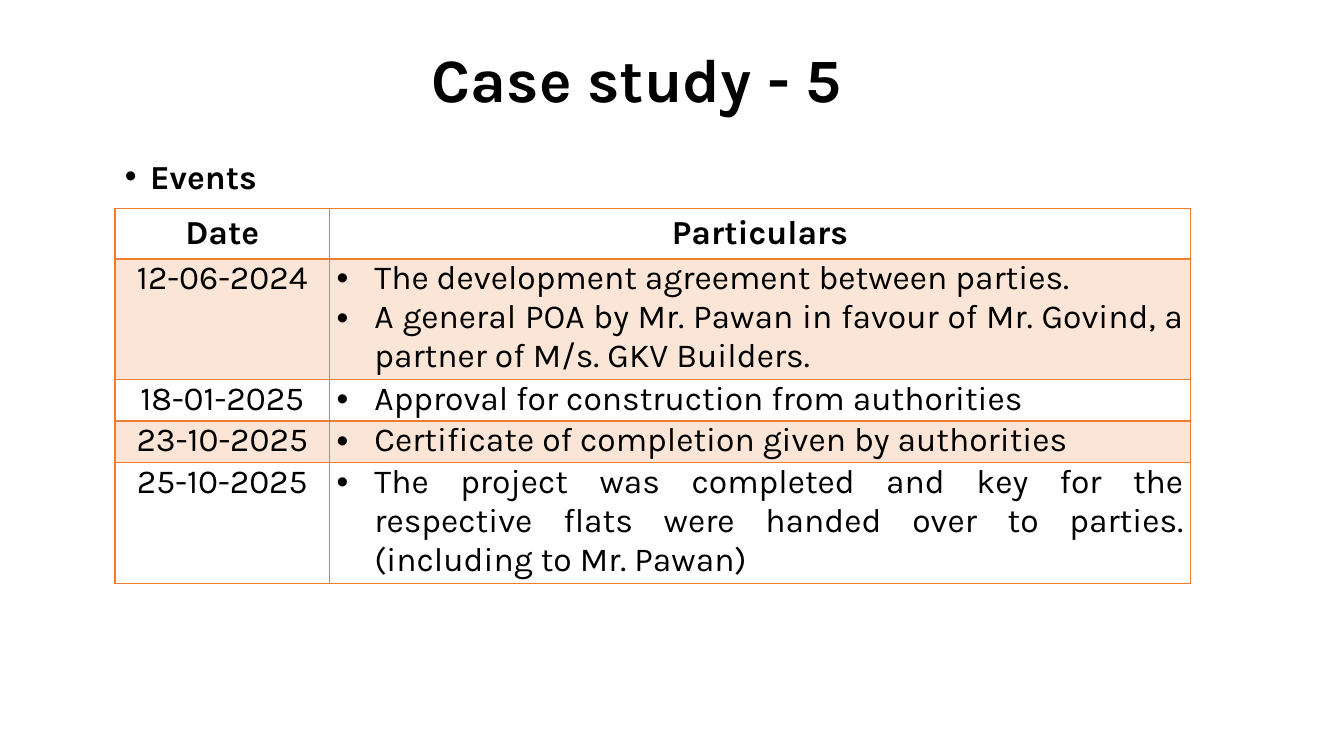
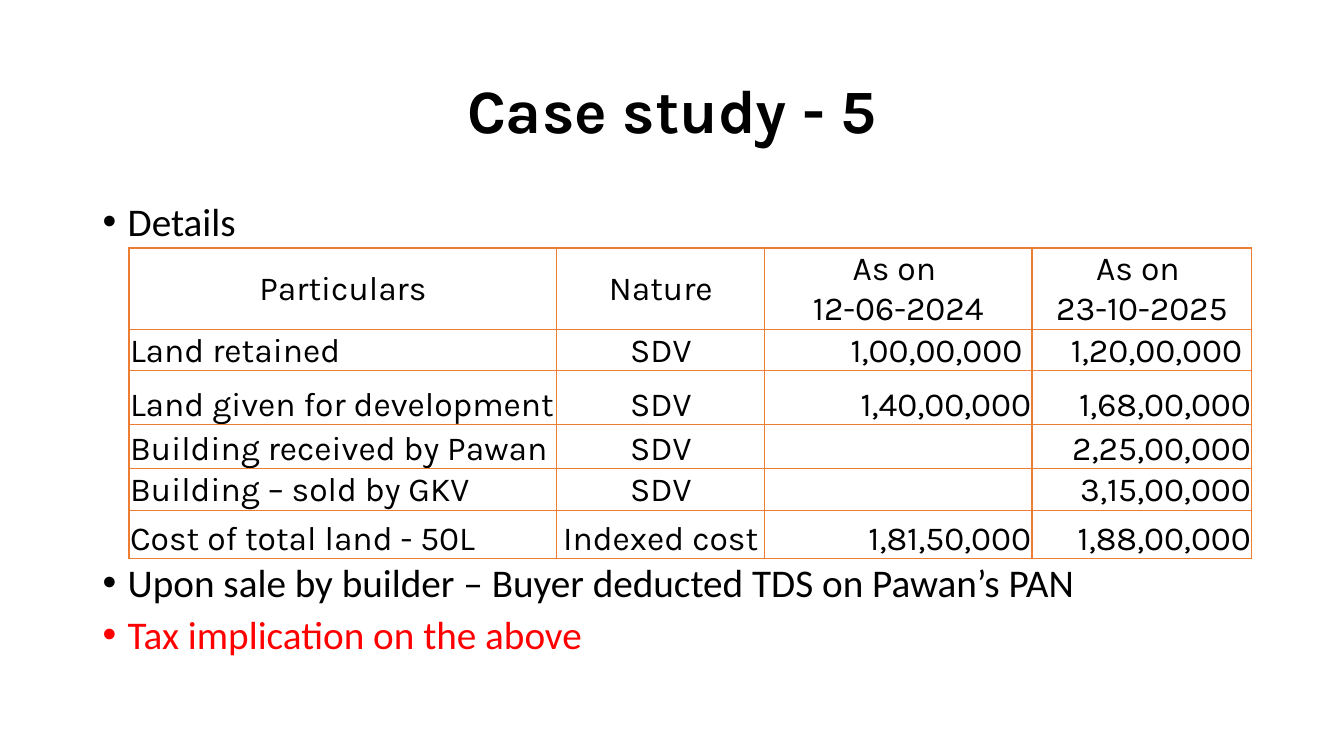
"""Build the two case study slides: the events and the property details."""
from dataclasses import dataclass

from lxml.etree import SubElement
from pptx import Presentation
from pptx.dml.color import RGBColor as Color
from pptx.enum.text import MSO_ANCHOR as Anchor, MSO_AUTO_SIZE as AutoSize, PP_ALIGN as Align
from pptx.oxml.ns import qn
from pptx.util import Pt


@dataclass(frozen=True)
class Theme:
    ink: Color = Color.from_string("000000")
    alert: Color = Color.from_string("FF0000")
    paper: Color = Color.from_string("FFFFFF")
    band: Color = Color.from_string("FBE5D6")
    border: str = "ED7D31"
    heading_font: str = "Karla"
    body_font: str = "Calibri"
    title_size: int = 44
    body_size: int = 28
    table_size: int = 24


theme = Theme()


def format_paragraph(paragraph, font, size, color=theme.ink, bold=False, indent=0):
    for run in paragraph.runs:
        run.font.name = font
        run.font.size = Pt(size)
        run.font.bold = bold
        run.font.color.rgb = color
    if indent:
        properties = paragraph._p.get_or_add_pPr()
        properties.set("marL", str(Pt(indent)))
        properties.set("indent", str(Pt(-indent)))
        SubElement(properties, qn("a:buFont"), typeface="Arial")
        SubElement(properties, qn("a:buChar"), char="•")


def format_cell(cell, fill, margins, top=1, bottom=1):
    properties = cell._tc.get_or_add_tcPr()
    for side, width in (("L", 1), ("R", 1), ("T", top), ("B", bottom)):
        line = SubElement(properties, qn(f"a:ln{side}"), w=str(Pt(width)))
        solid = SubElement(line, qn("a:solidFill"))
        SubElement(solid, qn("a:srgbClr"), val=theme.border)
    cell.fill.solid()
    cell.fill.fore_color.rgb = fill
    cell.margin_left, cell.margin_top, cell.margin_right, cell.margin_bottom = map(Pt, margins)


presentation = Presentation()
presentation.slide_width, presentation.slide_height = Pt(960), Pt(540)

slides = []
for title_box in ((49.7, 17.3, 810.7, 82.8), (66.2, 28.8, 828, 104.4)):
    slide = presentation.slides.add_slide(presentation.slide_layouts[5])
    title = slide.shapes.title
    title.left, title.top, title.width, title.height = map(Pt, title_box)
    title.text_frame.text = "Case study - 5"
    title.text_frame.auto_size = AutoSize.NONE
    title.text_frame.vertical_anchor = Anchor.MIDDLE
    paragraph = title.text_frame.paragraphs[0]
    paragraph.alignment = Align.CENTER
    paragraph.line_spacing = 0.9
    format_paragraph(paragraph, theme.heading_font, theme.title_size, bold=True)
    slides.append(slide)
events_slide, details_slide = slides

heading_style = (theme.heading_font, theme.table_size)
body_style = (theme.body_font, theme.body_size)
bullet_blocks = (
    (events_slide, (82.1, 110.9, 836, 36), 0.9, heading_style, True, [("Events", theme.ink)]),
    (details_slide, (66.2, 144, 828, 34), 0.8, body_style, False, [("Details", theme.ink)]),
    (details_slide, (66.2, 402, 828, 76), 0.8, body_style, False, [
        ("Upon sale by builder – Buyer deducted TDS on Pawan’s PAN", theme.ink),
        ("Tax implication on the above", theme.alert),
    ]),
)
for slide, box, line_spacing, style, bold, lines in bullet_blocks:
    text_frame = slide.shapes.add_textbox(*map(Pt, box)).text_frame
    text_frame.word_wrap = True
    text_frame.text = "\n".join(text for text, color in lines)
    for paragraph, (text, color) in zip(text_frame.paragraphs, lines):
        paragraph.line_spacing = line_spacing
        paragraph.space_before = Pt(10)
        format_paragraph(paragraph, *style, color, bold, indent=18)

events = (
    ("Date", "Particulars"),
    ("12-06-2024", "The development agreement between parties.\n"
     "A general POA by Mr. Pawan in favour of Mr. Govind, a partner of M/s. GKV Builders."),
    ("18-01-2025", "Approval for construction from authorities"),
    ("23-10-2025", "Certificate of completion given by authorities"),
    ("25-10-2025", "The project was completed and key for the respective flats were "
     "handed over to parties. (including to Mr. Pawan)"),
)
details = (
    ("Particulars", "Nature", "As on \n12-06-2024", "As on \n23-10-2025"),
    ("Land retained", "SDV", "1,00,00,000", "1,20,00,000"),
    ("Land given for development", "SDV", "1,40,00,000", "1,68,00,000"),
    ("Building received by Pawan", "SDV", "", "2,25,00,000"),
    ("Building – sold by GKV", "SDV", "", "3,15,00,000"),
    ("Cost of total land - 50L", "Indexed cost", "1,81,50,000", "1,88,00,000"),
)
tables = (
    (events_slide, events, (82.1, 148.8), (153.4, 614.9), (35.5, 84, 29.5, 29.5, 84),
     (Align.CENTER, Align.JUSTIFY)),
    (details_slide, details, (92.2, 177.1), (305.5, 148.5, 191, 157),
     (57, 28.5, 38.5, 31.5, 28.5, 34.5),
     (Align.LEFT, Align.CENTER, Align.RIGHT, Align.RIGHT)),
)
for slide, rows, corner, widths, heights, alignments in tables:
    is_events = rows is events
    frame = slide.shapes.add_table(len(rows), len(widths), *map(Pt, corner),
                                   Pt(sum(widths)), Pt(sum(heights)))
    table = frame.table
    table.first_row = table.horz_banding = False
    for column, width in zip(table.columns, widths):
        column.width = Pt(width)
    for row_index, (row, height) in enumerate(zip(rows, heights)):
        table.rows[row_index].height = Pt(height)
        is_header = row_index == 0
        for column_index, text in enumerate(row):
            cell = table.cell(row_index, column_index)
            cell.text_frame.text = text
            if is_events:
                margins = (7.2, 3.6, 7.2, 3.6) if is_header else (5, 0, 5, 0)
                fill = theme.band if row_index % 2 else theme.paper
                format_cell(cell, fill, margins, top=2 if row_index == 1 else 1,
                            bottom=2 if is_header else 1)
                cell.vertical_anchor = Anchor.TOP
            else:
                right = 7 if text in ("1,00,00,000", "1,20,00,000") else 0.7
                format_cell(cell, theme.paper, (0.7, 0.7, right, 0))
                cell.vertical_anchor = Anchor.MIDDLE if is_header else Anchor.BOTTOM
            bulleted = is_events and not is_header and column_index == 1
            for paragraph in cell.text_frame.paragraphs:
                paragraph.alignment = Align.CENTER if is_header else alignments[column_index]
                format_paragraph(paragraph, *heading_style, bold=is_events and is_header,
                                 indent=27 if bulleted else 0)

presentation.save("out.pptx")
